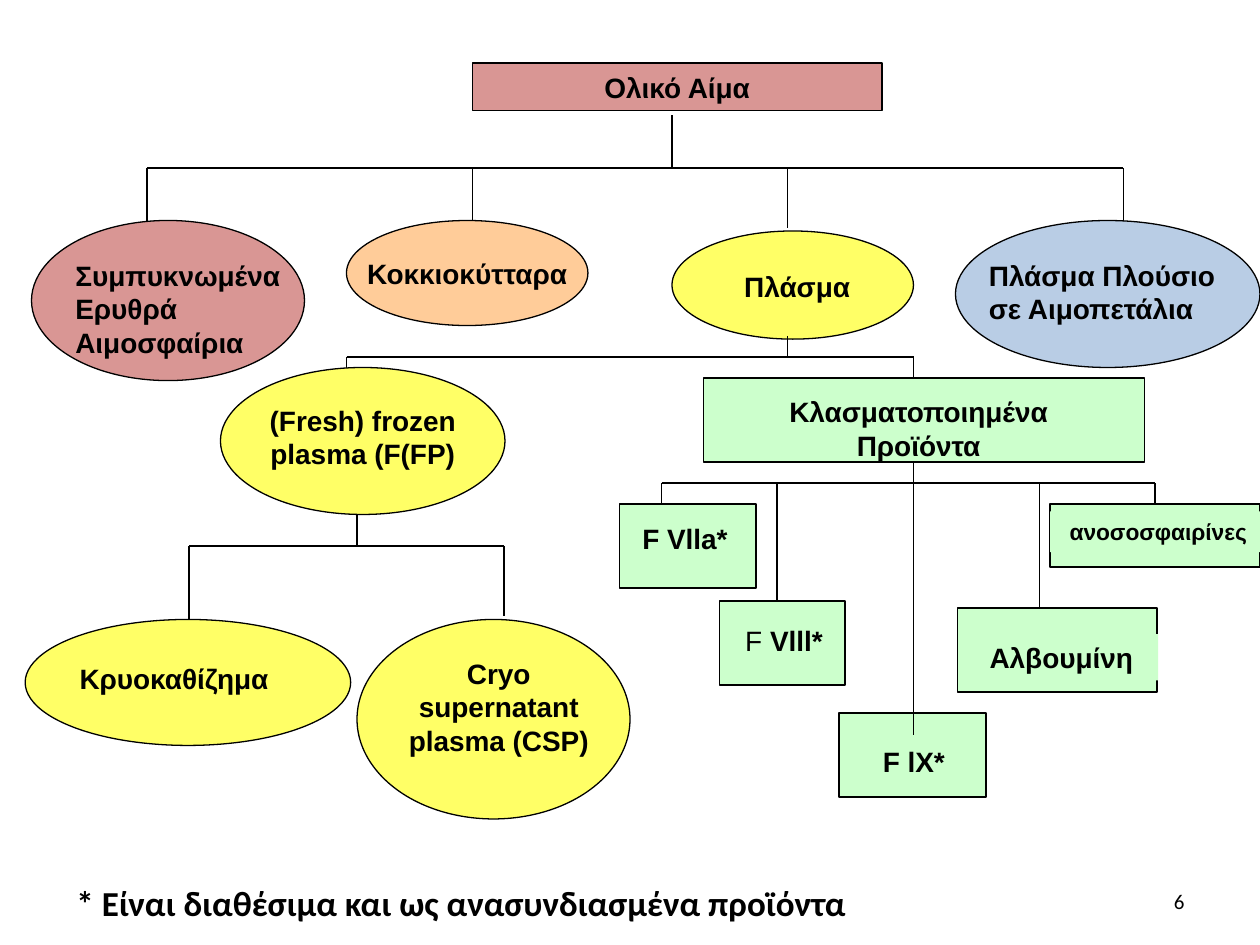
from pptx import Presentation
from pptx.dml.color import RGBColor
from pptx.enum.shapes import MSO_CONNECTOR as Link, MSO_SHAPE as Form
from pptx.enum.text import MSO_ANCHOR as Anchor, PP_ALIGN as Align
from pptx.oxml.ns import qn
from pptx.util import Inches, Pt

BLACK = RGBColor(0x00, 0x00, 0x00)
ROSE = RGBColor(0xD9, 0x96, 0x94)
ORANGE = RGBColor(0xFF, 0xCC, 0x99)
YELLOW = RGBColor(0xFF, 0xFF, 0x66)
BLUE = RGBColor(0xB9, 0xCD, 0xE5)
GREEN = RGBColor(0xCC, 0xFF, 0xCC)


class BloodChart:
    font = "Arial"
    size = 16
    stroke = 0.75
    columns, rows = 120, 90

    def __init__(self, deck):
        self.cell_width = deck.slide_width / self.columns
        self.cell_height = deck.slide_height / self.rows
        self.page = deck.slides.add_slide(deck.slide_layouts[6])

    def place(self, left, top, width, height):
        return (round(left * self.cell_width), round(top * self.cell_height),
                round(width * self.cell_width), round(height * self.cell_height))

    def letter(self, box, spans, align=Align.CENTER, size=None, font=None,
               anchor=Anchor.TOP, wrap=True, spacing=None):
        frame = box.text_frame
        frame.word_wrap = wrap
        frame.vertical_anchor = anchor
        para = frame.paragraphs[0]
        para.alignment = align
        para.line_spacing = spacing
        para.font.name = font or self.font
        para.font.size = Pt(size or self.size)
        para.font.color.rgb = BLACK
        for text, bold in spans:
            span = para.add_run()
            span.text = text
            span.font.bold = bold

    def label(self, area, *spans, **style):
        box = self.page.shapes.add_textbox(*self.place(*area))
        self.letter(box, spans, **style)

    def patch(self, area, *spans, **style):
        box = self.node(Form.RECTANGLE, area, GREEN)
        box.line.fill.background()
        self.letter(box, spans, **style)

    def node(self, form, area, colour):
        box = self.page.shapes.add_shape(form, *self.place(*area))
        box.shadow.inherit = False
        box.fill.solid()
        box.fill.fore_color.rgb = colour
        box.line.color.rgb = BLACK
        box.line.width = Pt(self.stroke)
        return box

    def line(self, left, top, right, bottom):
        link = self.page.shapes.add_connector(
            Link.STRAIGHT, *self.place(left, top, right, bottom))
        link.line.color.rgb = BLACK
        link.line.width = Pt(self.stroke)
        properties = link._element.spPr
        properties.append(properties.makeelement(qn("a:effectLst"), {}))

    def branch(self, trunk, top, bar, drops):
        self.line(trunk, top, trunk, bar)
        self.line(drops[0][0], bar, drops[-1][0], bar)
        for column, bottom in drops:
            self.line(column, bar, column, bottom)


def main():
    deck = Presentation()
    deck.slide_width, deck.slide_height = Inches(10), Inches(7.5)
    chart = BloodChart(deck)

    blood = chart.node(Form.RECTANGLE, (45, 6, 39, 4.55), ROSE)
    chart.letter(blood, [("Ολικό Αίμα", True)], anchor=Anchor.MIDDLE)
    chart.node(Form.OVAL, (3, 21, 26, 15.25), ROSE)
    chart.label((6, 24, 24, 10.8), ("Συμπυκνωμένα Ερυθρά Αιμοσφαίρια", True),
                align=Align.LEFT)
    cells = chart.node(Form.OVAL, (33, 21, 23, 10), ORANGE)
    chart.letter(cells, [("Κοκκιοκύτταρα", True)], anchor=Anchor.MIDDLE, wrap=False)
    chart.node(Form.OVAL, (64, 22, 23, 10.3), YELLOW)
    chart.label((69.7, 25.1, 12.6, 4.4), ("Πλάσμα", True), align=Align.LEFT)
    chart.node(Form.OVAL, (91, 21, 29, 14), BLUE)
    chart.label((93, 24, 27, 7.7), ("Πλάσμα Πλούσιο σε Αιμοπετάλια", True),
                align=Align.LEFT)
    chart.branch(64, 11, 16, [(14, 21), (45, 21), (75, 21.7), (107, 21)])
    chart.branch(75, 32, 34, [(33, 39), (87, 36)])

    chart.node(Form.OVAL, (21, 35, 27.1, 14), YELLOW)
    chart.label((24.4, 37.8, 20.3, 7.6), ("(Fresh) frozen plasma (F(FP)", True))
    chart.node(Form.OVAL, (2.4, 59, 31, 12), YELLOW)
    chart.label((6.4, 62.4, 24, 4.4), ("Κρυοκαθίζημα", True), align=Align.LEFT)
    chart.node(Form.OVAL, (34, 59, 26, 19), YELLOW)
    chart.label((37.1, 61.9, 20.8, 10.8), ("Cryo supernatant plasma (CSP)", True))

    for area in [(67, 36, 42, 8), (59, 48, 13, 8), (68.5, 57.25, 12, 8),
                 (79.9, 67.9, 14, 8), (91.2, 57.9, 19, 8), (100, 48, 20, 6)]:
        chart.node(Form.RECTANGLE, area, GREEN)
    chart.patch((82.9, 70.3, 9, 4.4), ("F lX*", True), align=Align.LEFT)
    chart.patch((100, 48.7, 20, 3.9), (" ", False), ("ανοσοσφαιρίνες", True), size=13)
    chart.patch((92.6, 60.4, 17.7, 4.4), ("Αλβουμίνη ", True))
    chart.label((69, 37, 37, 7.7), ("Κλασματοποιημένα Προϊόντα", True))
    chart.label((60, 49.1, 10.6, 4.4), ("F Vlla*", True), align=Align.LEFT, wrap=False)
    chart.label((69.8, 58.8, 9.8, 4.4), ("F ", False), ("Vlll*", True),
                align=Align.LEFT, wrap=False)
    chart.branch(34, 49, 52, [(18, 59), (48, 58.7)])
    chart.branch(87, 44, 46, [(63, 48), (74, 57.25), (87, 70), (99, 57.9), (110, 48)])

    chart.label((6.1, 83.8, 102.4, 4.8),
                ("* Είναι διαθέσιμα και ως ανασυνδιασμένα προϊόντα", True),
                align=Align.LEFT, size=20, font="Calibri", spacing=0.9)
    chart.label((86, 83.4, 28, 4.8), ("6", False), align=Align.RIGHT, size=12,
                font="Calibri", anchor=Anchor.MIDDLE)
    deck.save("out.pptx")


if __name__ == "__main__":
    main()
